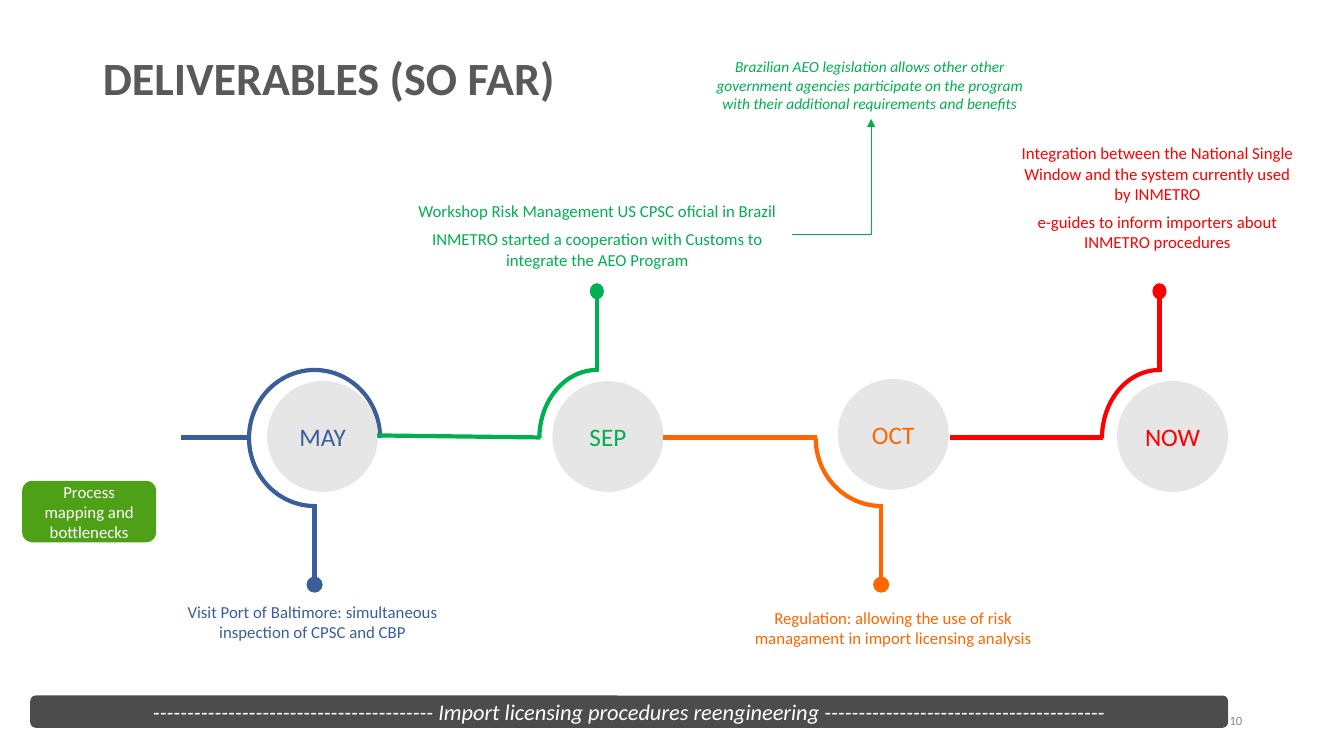
from dataclasses import dataclass

import pptx
import pptx.dml.color
import pptx.enum.shapes
import pptx.enum.text
import pptx.util
from lxml import etree
from pptx.oxml.ns import qn
from pptx.util import Inches

SHAPE = pptx.enum.shapes.MSO_SHAPE
CONNECTOR = pptx.enum.shapes.MSO_CONNECTOR
ALIGN = pptx.enum.text.PP_ALIGN
ANCHOR = pptx.enum.text.MSO_ANCHOR


@dataclass(frozen=True)
class Theme:
    font: str = "Calibri"
    blue: str = "3A5E9C"
    green: str = "00B050"
    orange: str = "FF6600"
    red: str = "FF0000"
    disc: str = "E7E6E6"
    banner: str = "4C4C4C"
    process: str = "4EA017"
    white: str = "FFFFFF"
    title: str = "595959"
    number: str = "888888"
    title_size: int = 33
    month_size: int = 18
    banner_size: int = 16
    note_size: int = 12
    remark_size: int = 11
    number_size: int = 9
    track: float = 3


T = Theme()
RGB = pptx.dml.color.RGBColor.from_string


def write(sp, lines, size, color, align=ALIGN.CENTER, anchor=ANCHOR.TOP, italic=False, bold=False):
    tf = sp.text_frame
    tf.word_wrap = True
    tf.vertical_anchor = anchor
    tf.text = "\n".join(lines)
    for i, p in enumerate(tf.paragraphs):
        p.alignment = align
        if i:
            p.space_before = pptx.util.Pt(6)
        for r in p.runs:
            r.font.name = T.font
            r.font.size = pptx.util.Pt(size)
            r.font.color.rgb = RGB(color)
            r.font.italic = italic
            r.font.bold = bold


def draw(kind, box, fill=None, line=None, width=T.track):
    """Add a shape (box is left, top, width, height) or connector (box is x1, y1, x2, y2)."""
    box = [Inches(v) for v in box]
    if kind in (CONNECTOR.STRAIGHT, CONNECTOR.ELBOW):
        sp = s.shapes.add_connector(kind, *box)
        etree.SubElement(sp._element.spPr, qn("a:effectLst"))
    else:
        sp = s.shapes.add_shape(kind, *box)
        sp.shadow.inherit = False
        if fill:
            sp.fill.solid()
            sp.fill.fore_color.rgb = RGB(fill)
        else:
            sp.fill.background()
    if line:
        sp.line.color.rgb = RGB(line)
        sp.line.width = pptx.util.Pt(width)
    else:
        sp.line.fill.background()
    return sp


prs = pptx.Presentation()
prs.slide_width, prs.slide_height = Inches(13.33), Inches(7.5)
s = prs.slides.add_slide(prs.slide_layouts[5])

number = s.shapes.add_textbox(Inches(9.42), Inches(6.95), Inches(3), Inches(0.4))
write(number, ["10"], T.number_size, T.number, ALIGN.RIGHT, ANCHOR.MIDDLE)

title = s.shapes.title
title.left, title.top, title.width, title.height = (Inches(v) for v in (0.92, 0.29, 11.5, 1.45))
write(title, ["DELIVERABLES (SO FAR)"], T.title_size, T.title, ALIGN.LEFT, ANCHOR.MIDDLE, bold=True)
title.text_frame.margin_bottom = Inches(0.48)
title.text_frame.paragraphs[0].line_spacing = 0.9

# Month, colour, branch goes up, lead start (x, y), arc left, arc angles, disc left and top
milestones = [
    ("MAY", T.blue, False, (1.8, 4.34), 2.47, (90, 0), (2.65, 3.78)),
    ("SEP", T.green, True, (3.74, 4.32), 5.35, (180, 270), (5.48, 3.78)),
    ("OCT", T.orange, False, (6.58, 4.34), 8.09, (90, 180), (8.31, 3.76)),
    ("NOW", T.red, True, (9.42, 4.34), 10.93, (180, 270), (11.08, 3.78)),
]
AXIS, ARC_TOP, ARC_HEIGHT, DOT, DISC = 4.34, 3.67, 1.35, 0.16, 1.1

for month, color, up, lead, arc_left, angles, disc_at in milestones:
    arc_width, dot_width = (1.14, 0.14) if up else (1.3, DOT)
    stem_start, stem_end, dot_y = (3.69, 2.92, 2.89) if up else (5, 5.77, 5.8)
    stem_x = arc_left + arc_width / 2

    arc = draw(SHAPE.ARC, (arc_left, ARC_TOP, arc_width, ARC_HEIGHT), line=color)
    for i, angle in enumerate(angles):
        arc.adjustments[i] = angle * 0.6  # degrees in units of 100000/60000
    draw(CONNECTOR.STRAIGHT, (*lead, arc_left + 0.01, AXIS), line=color)
    draw(CONNECTOR.STRAIGHT, (stem_x, stem_start, stem_x, stem_end), line=color)
    draw(SHAPE.OVAL, (stem_x - dot_width / 2, dot_y - DOT / 2, dot_width, DOT), fill=color)
    disc = draw(SHAPE.OVAL, (*disc_at, DISC, DISC), fill=T.disc)
    write(disc, [month], T.month_size, color, anchor=ANCHOR.MIDDLE)

notes = [
    ((1.58, 5.92, 3.04, 0.59), T.blue,
     ["Visit Port of Baltimore: simultaneous inspection of CPSC and CBP"]),
    ((3.99, 1.94, 3.87, 0.79), T.green,
     ["Workshop Risk Management US CPSC oficial in Brazil",
      "INMETRO started a cooperation with Customs to integrate the AEO Program"]),
    ((7.13, 5.98, 3.46, 0.5), T.orange,
     ["Regulation: allowing the use of risk managament in import licensing analysis"]),
    ((9.98, 1.37, 3, 1.28), T.red,
     ["Integration between the National Single Window and the system currently used by INMETRO",
      "e-guides to inform importers about INMETRO procedures"]),
]
for box, color, lines in notes:
    write(s.shapes.add_textbox(*(Inches(v) for v in box)), lines, T.note_size, color)

banner = draw(SHAPE.ROUNDED_RECTANGLE, (0.3, 6.9, 11.88, 0.32), fill=T.banner)
dashes = "-" * 41
write(banner, [f"{dashes} Import licensing procedures reengineering {dashes}"],
      T.banner_size, T.white, anchor=ANCHOR.MIDDLE, italic=True)

remark = s.shapes.add_textbox(Inches(6.9), Inches(0.52), Inches(3.46), Inches(0.66))
write(remark, ["Brazilian AEO legislation allows other other government agencies participate "
               "on the program with their additional requirements and benefits"],
      T.remark_size, T.green, italic=True)

elbow = draw(CONNECTOR.ELBOW, (7.86, 2.33, 8.64, 1.18), line=T.green, width=0.75)
elbow._element.spPr.find(qn("a:prstGeom")).set("prst", "bentConnector2")
etree.SubElement(elbow._element.spPr.find(qn("a:ln")), qn("a:tailEnd"), type="triangle")

process = draw(SHAPE.ROUNDED_RECTANGLE, (0.22, 4.77, 1.33, 0.61), fill=T.process)
write(process, ["Process mapping and bottlenecks"], T.note_size, T.white, anchor=ANCHOR.MIDDLE)

prs.save("out.pptx")
